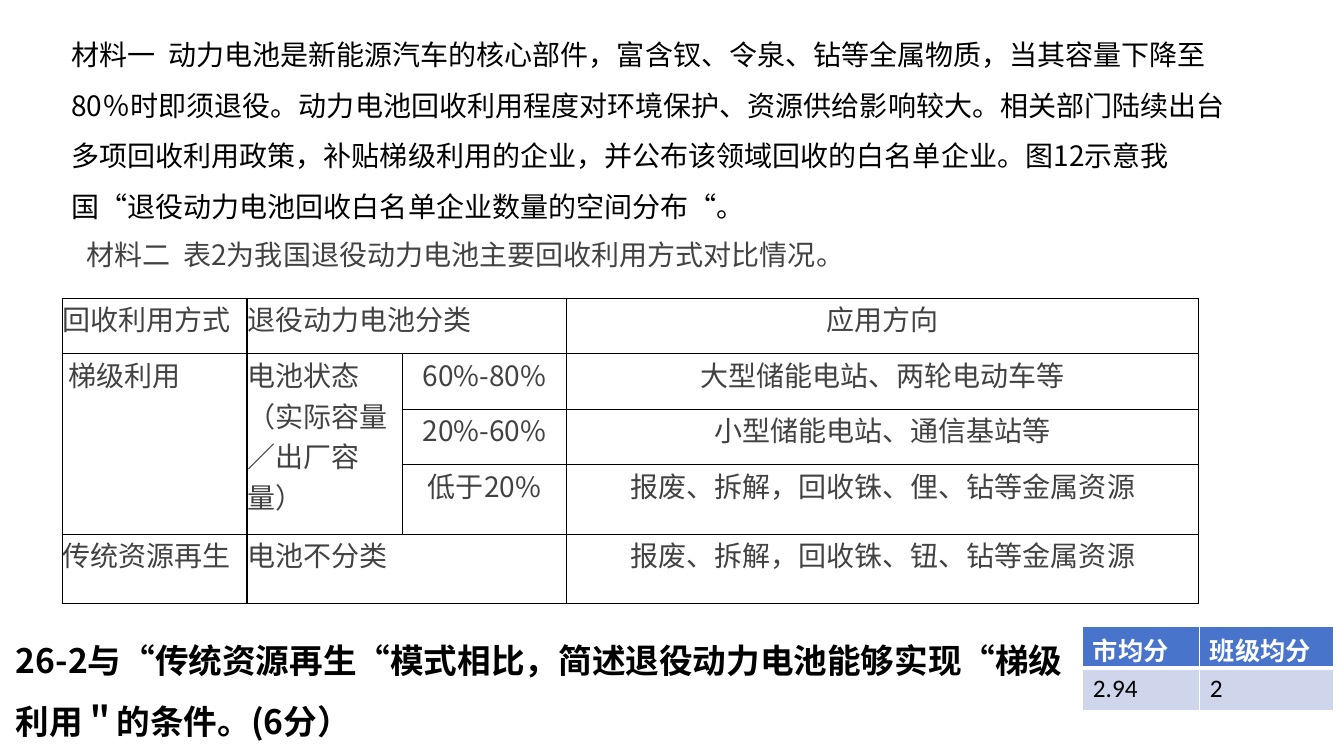
"""Build the slide on recycling of retired power batteries."""
from lxml.etree import SubElement
from pptx import Presentation
from pptx.dml.color import RGBColor
from pptx.enum.text import PP_ALIGN
from pptx.oxml.ns import qn
from pptx.util import Inches, Pt

COLORS = {"black": "000000", "gray": "424242", "white": "FFFFFF",
          "header": "4874CB", "band": "CFD6EC"}
CJK_FONT = "Noto Sans CJK SC"


def write_text(frame, text, size=20, color="gray", font=CJK_FONT, bold=False,
               align=PP_ALIGN.LEFT, spacing=1.0):
    frame.word_wrap = True
    paragraph = frame.paragraphs[0]
    paragraph.alignment = align
    paragraph.line_spacing = spacing
    run = paragraph.add_run()
    run.text = text
    run.font.size = Pt(size)
    run.font.bold = bold
    run.font.name = font
    run.font.color.rgb = RGBColor.from_string(COLORS[color])
    SubElement(run.font._element, qn("a:ea"), typeface=CJK_FONT)


def add_grid(box, widths, heights, border, bottom=1):
    left, top = box
    table = slide.shapes.add_table(
        len(heights), len(widths), Inches(left), Inches(top),
        Inches(sum(widths)), Inches(sum(heights))).table
    table.first_row = False
    table.horz_banding = False
    for column, width in zip(table.columns, widths):
        column.width = Inches(width)
    for row, height in zip(table.rows, heights):
        row.height = Inches(height)
    for index, cell in enumerate(table.iter_cells()):
        properties = cell._tc.get_or_add_tcPr()
        for side in "LRTB":
            thick = side == "B" and index < len(widths)
            points = bottom if thick else 1
            line = SubElement(properties, qn(f"a:ln{side}"), w=str(Pt(points)))
            fill = SubElement(line, qn("a:solidFill"))
            SubElement(fill, qn("a:srgbClr"), val=COLORS[border])
        cell.fill.background()
    return table


presentation = Presentation()
presentation.slide_width = Inches(13.33)
presentation.slide_height = Inches(7.5)
slide = presentation.slides.add_slide(presentation.slide_layouts[6])

passages = [
    ((0.61, 0.16, 11.81, 6.74),
     "材料一  动力电池是新能源汽车的核心部件，富含钗、令泉、钻等全属物质，当其容量下降至80％时即须退役。"
     "动力电池回收利用程度对环境保护、资源供给影响较大。相关部门陆续出台多项回收利用政策，补贴梯级利用的企业，"
     "并公布该领域回收的白名单企业。图12示意我国“退役动力电池回收白名单企业数量的空间分布“。",
     {"color": "black", "spacing": 1.5}),
    ((0.76, 2.31, 10.45, 0.78),
     "材料二  表2为我国退役动力电池主要回收利用方式对比情况。", {}),
    ((0.06, 6.1, 10.79, 1.31),
     "26-2与“传统资源再生“模式相比，简述退役动力电池能够实现“梯级利用＂的条件。(6分）",
     {"size": 24, "color": "black", "bold": True, "spacing": 1.5}),
]
for box, text, style in passages:
    textbox = slide.shapes.add_textbox(*map(Inches, box))
    write_text(textbox.text_frame, text, **style)

methods = [
    ["回收利用方式", "退役动力电池分类", None, "应用方向"],
    [" 梯级利用", "电池状态（实际容量／出厂容量）", "60%-80%", "大型储能电站、两轮电动车等"],
    [None, None, "20%-60%", "小型储能电站、通信基站等"],
    [None, None, "低于20%", "报废、拆解，回收铢、俚、钻等金属资源"],
    ["传统资源再生", "电池不分类", None, "报废、拆解，回收铢、钮、钻等金属资源"],
]
method_table = add_grid((0.62, 2.96), [1.83, 1.54, 1.63, 6.27],
                        [0.55, 0.55, 0.55, 0.69, 0.69], "black")
for first, last in [((0, 1), (0, 2)), ((1, 0), (3, 0)),
                    ((1, 1), (3, 1)), ((4, 1), (4, 2))]:
    method_table.cell(*first).merge(method_table.cell(*last))
for row, texts in enumerate(methods):
    for column, text in enumerate(texts):
        if text:
            cell = method_table.cell(row, column)
            cell.margin_left = cell.margin_right = Inches(0)
            cell.margin_top = cell.margin_bottom = Inches(0)
            align = PP_ALIGN.CENTER if column > 1 else PP_ALIGN.LEFT
            write_text(cell.text_frame, text, align=align)

scores = [["市均分", "班级均分"], ["2.94", "2"]]
score_styles = [("header", "white", True), ("band", "black", False)]
score_table = add_grid((10.74, 6.21), [1.16, 1.33], [0.42, 0.42], "white", bottom=3)
for row, (texts, (fill, color, bold)) in enumerate(zip(scores, score_styles)):
    for column, text in enumerate(texts):
        cell = score_table.cell(row, column)
        cell.fill.solid()
        cell.fill.fore_color.rgb = RGBColor.from_string(COLORS[fill])
        write_text(cell.text_frame, text, size=18, color=color,
                   font="Calibri", bold=bold)

presentation.save("out.pptx")
